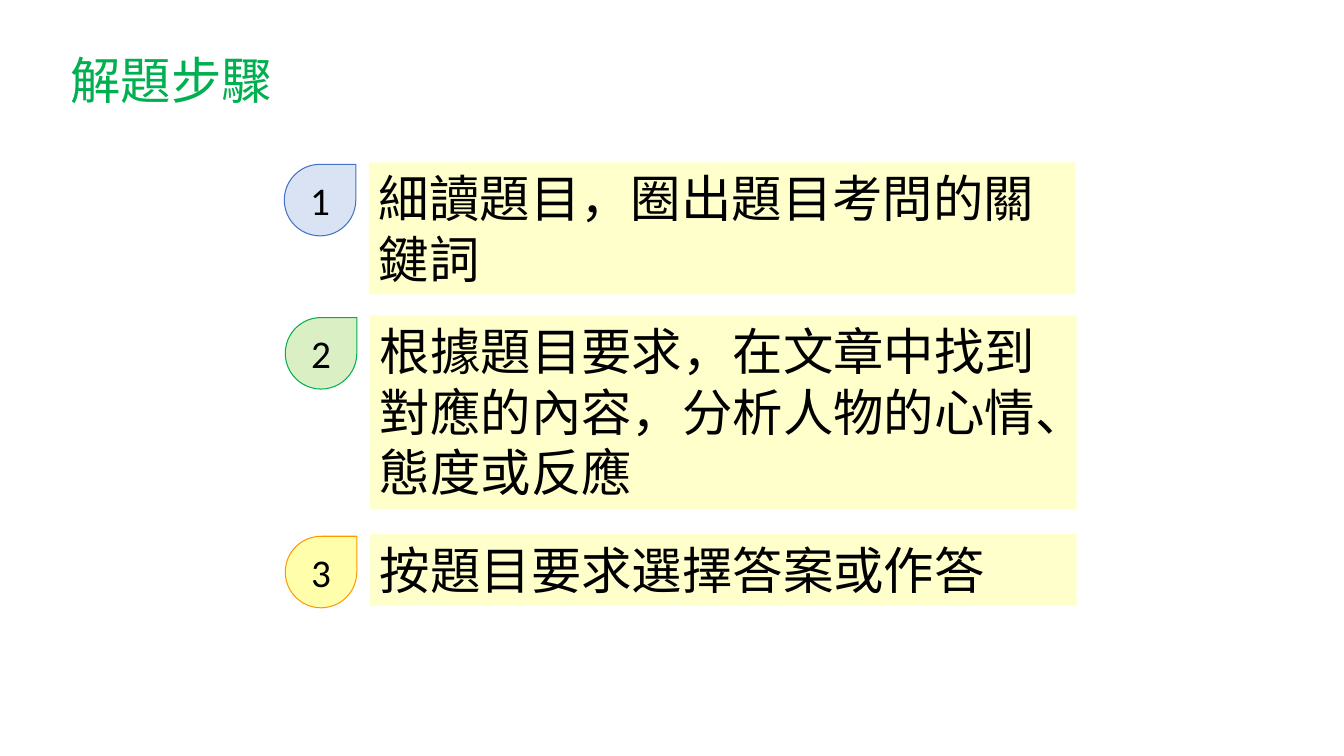
import pptx
import pptx.dml.color
import pptx.enum.shapes
import pptx.enum.text
import pptx.oxml.ns
import pptx.util
from lxml import etree

COLORS = {
    "title": "00B050", "text": "000000", "panel": "FFFFCC",
    "blue": "8FAADC", "blue_line": "4472C4",
    "green": "92D050", "green_line": "00B050",
    "yellow": "FFFF00", "yellow_line": "FF9900",
}
COLS, ROWS = 133.33, 75
CELL = pptx.util.Inches(0.1)
SHAPE = pptx.enum.shapes.MSO_SHAPE
ALIGN = pptx.enum.text.PP_ALIGN
ANCHOR = pptx.enum.text.MSO_ANCHOR


def rgb(name):
    return pptx.dml.color.RGBColor.from_string(COLORS[name])


def write(sp, text, size=36, color="text", font="Calibri",
          align=ALIGN.LEFT, anchor=ANCHOR.TOP, wrap=True, grow=True):
    tf = sp.text_frame
    tf.word_wrap = wrap
    tf.vertical_anchor = anchor
    if grow:
        tf.auto_size = pptx.enum.text.MSO_AUTO_SIZE.SHAPE_TO_FIT_TEXT
    p = tf.paragraphs[0]
    p.alignment = align
    r = p.add_run()
    r.text = text
    r.font.size = pptx.util.Pt(size)
    r.font.name = font
    r.font.color.rgb = rgb(color)
    ea = etree.SubElement(r.font._element, pptx.oxml.ns.qn("a:ea"))
    ea.set("typeface", "Noto Sans CJK SC")


class Deck:
    """Holds the grid and the current slide; lengths are in grid cells."""

    def __init__(self):
        self.prs = pptx.Presentation()
        self.prs.slide_width = int(COLS * CELL)
        self.prs.slide_height = ROWS * CELL
        self.s = self.prs.slides.add_slide(self.prs.slide_layouts[6])

    def box(self, *cells):
        return [int(n * CELL) for n in cells]

    def shape(self, kind, fill, *cells):
        sp = self.s.shapes.add_shape(kind, *self.box(*cells))
        sp.shadow.inherit = False
        sp.fill.solid()
        sp.fill.fore_color.rgb = rgb(fill)
        sp.line.fill.background()
        return sp

    def title(self, text, *cells):
        sp = self.s.shapes.add_textbox(*self.box(*cells))
        write(sp, text, color="title", font="Noto Sans CJK SC", wrap=False)

    def panel(self, text, *cells):
        write(self.shape(SHAPE.RECTANGLE, "panel", *cells), text)

    def badge(self, text, color, *cells):
        sp = self.shape(SHAPE.TEAR, color, *cells)
        fill = sp._element.spPr.find(pptx.oxml.ns.qn("a:solidFill"))
        etree.SubElement(fill[0], pptx.oxml.ns.qn("a:alpha")).set("val", "33000")
        sp.line.color.rgb = rgb(color + "_line")
        sp.line.width = pptx.util.Pt(0.75)
        write(sp, text, size=28, align=ALIGN.CENTER, anchor=ANCHOR.MIDDLE,
              grow=False)

    def step(self, number, text, color, left, top, height):
        self.panel(text, left + 8.4, top, 70.1, height)
        self.badge(str(number), color, left, top + 0.2, 7.1, 7.1)


def main():
    deck = Deck()
    deck.title("解題步驟", 6, 4.4, 22.2, 7.1)
    steps = [
        ("細讀題目，圈出題目考問的關鍵詞", "blue", 28.2, 16.1, 13.1),
        ("根據題目要求，在文章中找到對應的內容，分析人物的心情、態度或反應",
         "green", 28.3, 31.3, 19.2),
        ("按題目要求選擇答案或作答", "yellow", 28.3, 53, 7.1),
    ]
    for number, step in enumerate(steps, 1):
        deck.step(number, *step)
    deck.prs.save("out.pptx")


if __name__ == "__main__":
    main()
